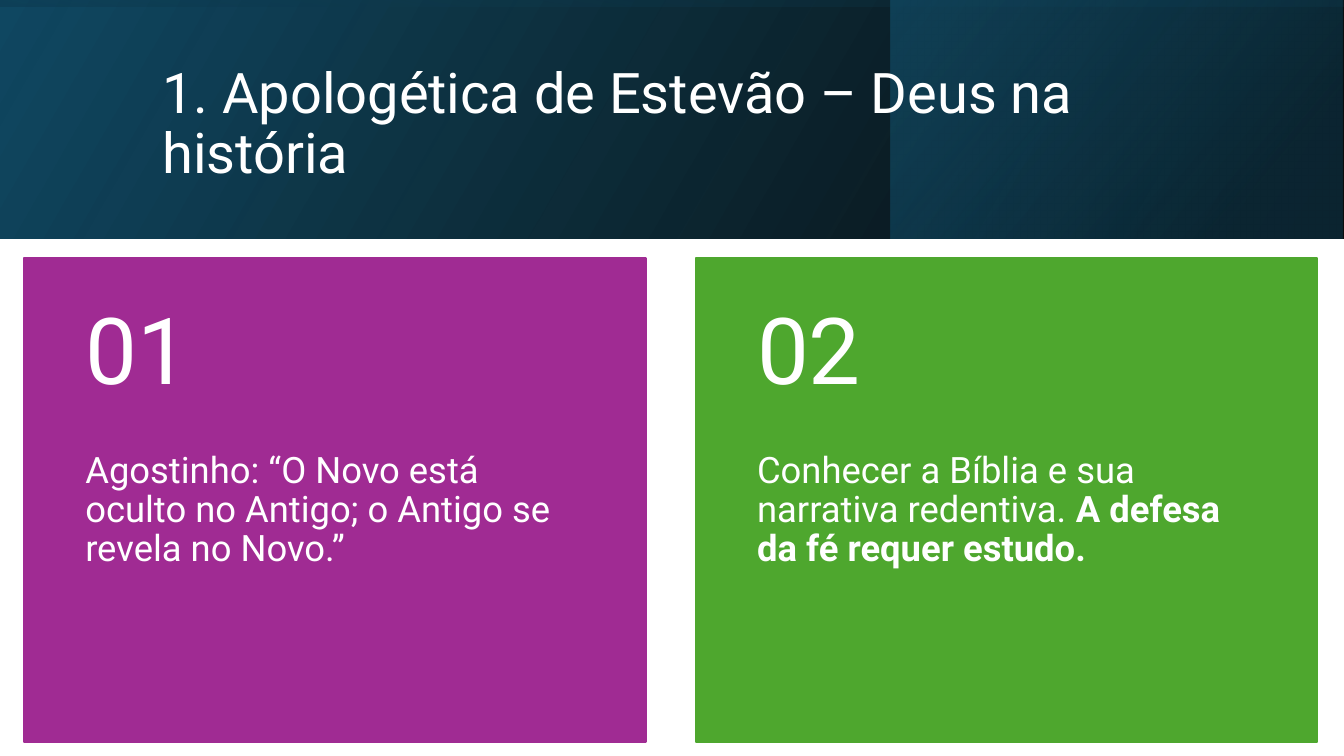
import dataclasses
import typing

import lxml.etree
import pptx
import pptx.dml.color
import pptx.enum.shapes
import pptx.enum.text
import pptx.oxml.ns
import pptx.util

Cm = pptx.util.Cm
Box = tuple[float, float, float, float]
ANCHOR = pptx.enum.text.MSO_ANCHOR

COLORS = {
    "white": "FFFFFF",
    "black": "000000",
    "navy": "104862",
    "deep": "0B3041",
    "teal": "156082",
    "purple": "A02B93",
    "green": "4EA72E",
}
WIDE, HIGH = 33.87, 19.05
BAND = 6.02  # height of the header


@dataclasses.dataclass
class Stop:
    at: float
    color: str
    alpha: int  # opacity in percent


@dataclasses.dataclass
class Layer:
    box: Box
    angle: float  # clockwise degrees
    stops: tuple[Stop, Stop]
    turn: float = 0


@dataclasses.dataclass
class Card:
    number: str
    color: str
    plain: str
    bold: str = ""


LAYERS = [
    Layer((0, 0, WIDE, BAND), 330,
          (Stop(0, "black", 96), Stop(1, "navy", 100))),
    Layer((22.45, 0, 11.38, BAND), 320,
          (Stop(0.19, "deep", 68), Stop(1, "teal", 48))),
    Layer(((WIDE - BAND) / 2, (BAND - WIDE) / 2, BAND, WIDE), 350,
          (Stop(0.23, "navy", 16), Stop(0.99, "black", 45)), 270),
]
CARDS = [
    Card("01", "purple",
         "Agostinho: “O Novo está oculto no Antigo; o Antigo se revela no Novo.”"),
    Card("02", "green", "Conhecer a Bíblia e sua narrativa redentiva. ",
         "A defesa da fé requer estudo."),
]


def rgb(name: str) -> pptx.dml.color.RGBColor:
    return pptx.dml.color.RGBColor.from_string(COLORS[name])


def style(item: typing.Any, values: dict[str, typing.Any]) -> None:
    for key, value in values.items():
        setattr(item, key, value)


def rect(slide: typing.Any, box: Box) -> typing.Any:
    shape = slide.shapes.add_shape(
        pptx.enum.shapes.MSO_SHAPE.RECTANGLE, *map(Cm, box))
    shape.shadow.inherit = False
    return shape


def draw_layer(slide: typing.Any, layer: Layer) -> None:
    shape = rect(slide, layer.box)
    shape.rotation = layer.turn
    shape.line.fill.background()
    shape.fill.gradient()
    shape.fill.gradient_angle = 360 - layer.angle
    for mark, stop in zip(shape.fill.gradient_stops, layer.stops):
        mark.position = stop.at
        mark.color.rgb = rgb(stop.color)
    # Mirroring and opacity need XML
    props = shape._element.spPr
    props.xfrm.set("flipH", "1")
    tag = pptx.oxml.ns.qn
    for node, stop in zip(props.iter(tag("a:srgbClr")), layer.stops):
        alpha = lxml.etree.SubElement(node, tag("a:alpha"))
        alpha.set("val", str(stop.alpha * 1000))


def write(slide: typing.Any, box: Box, size: int, plain: str, bold: str = "",
          **frame: typing.Any) -> None:
    text = slide.shapes.add_textbox(*map(Cm, box)).text_frame
    style(text, {"word_wrap": True, **frame})
    para = text.paragraphs[0]
    para.line_spacing = 0.9
    for words, heavy in ((plain, False), (bold, True)):
        if words:
            run = para.add_run()
            run.text = words
            style(run.font, {"name": "Roboto", "size": pptx.util.Pt(size),
                             "bold": heavy})
            run.font.color.rgb = rgb("white")


def draw_card(slide: typing.Any, card: Card, left: float) -> None:
    top, wide, head, body = 6.5, 15.67, 4.88, 7.33
    panel = rect(slide, (left, top, wide, head + body))
    for fill in (panel.fill, panel.line.fill):
        fill.solid()
        fill.fore_color.rgb = rgb(card.color)
    panel.line.width = pptx.util.Pt(1.5)
    sides = {"margin_left": Cm(1.55), "margin_right": Cm(1.55)}
    write(slide, (left, top + head, wide, body), 26, card.plain, card.bold,
          margin_top=0, margin_bottom=Cm(0.91), **sides)
    write(slide, (left, top, wide, head), 66, card.number,
          vertical_anchor=ANCHOR.MIDDLE,
          margin_top=Cm(0.46), margin_bottom=Cm(0.46), **sides)


def main() -> None:
    deck = pptx.Presentation()
    style(deck, {"slide_width": Cm(WIDE), "slide_height": Cm(HIGH)})
    slide = deck.slides.add_slide(deck.slide_layouts[6])

    # Header
    for layer in LAYERS:
        draw_layer(slide, layer)
    write(slide, (3.84, 0.97, 27, 4.37), 40,
          "1. Apologética de Estevão – Deus na história",
          vertical_anchor=ANCHOR.MIDDLE)

    # Cards
    for index, card in enumerate(CARDS):
        draw_card(slide, card, 0.6 + 16.93 * index)

    deck.save("out.pptx")


if __name__ == "__main__":
    main()
